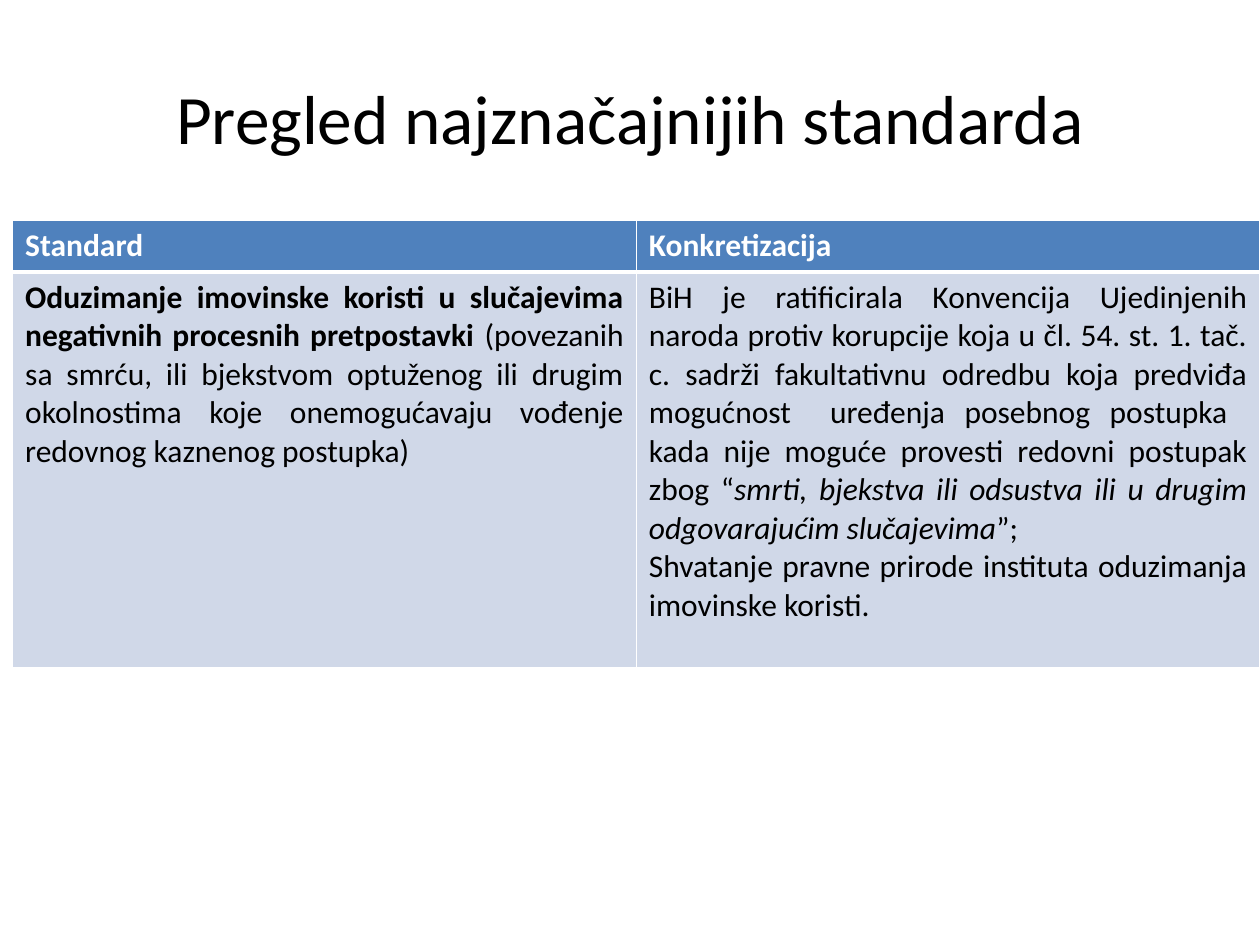
import pptx
import pptx.dml.color
import pptx.enum.text
import pptx.oxml
import pptx.oxml.ns
import pptx.util
from dataclasses import dataclass

Inches = pptx.util.Inches
Pt = pptx.util.Pt
ALIGN = pptx.enum.text.PP_ALIGN
ANCHOR = pptx.enum.text.MSO_ANCHOR


@dataclass(frozen=True)
class Theme:
    font: str = "Calibri"
    text: str = "000000"
    light: str = "FFFFFF"
    header: str = "4F81BD"
    body: str = "D0D8E8"
    title_size: float = 39.6
    cell_size: float = 18


THEME = Theme()

HEADERS = ["Standard", "Konkretizacija"]

# Each cell holds paragraphs; each paragraph holds (text, format) runs
BODY = [
    [[
        ("Oduzimanje imovinske koristi u slučajevima negativnih procesnih "
         "pretpostavki", {"bold": True}),
        (" (povezanih sa smrću, ili bjekstvom optuženog ili drugim "
         "okolnostima koje onemogućavaju vođenje redovnog kaznenog "
         "postupka)", {}),
    ]],
    [
        [
            ("BiH je ratificirala Konvencija Ujedinjenih naroda protiv "
             "korupcije koja u čl. 54. st. 1. tač. c. sadrži fakultativnu "
             "odredbu koja predviđa mogućnost  uređenja posebnog postupka  "
             "kada nije moguće provesti redovni postupak zbog “", {}),
            ("smrti, bjekstva ili odsustva ili u drugim odgovarajućim "
             "slučajevima", {"italic": True}),
            ("”;", {}),
        ],
        [("Shvatanje pravne prirode instituta oduzimanja imovinske "
          "koristi.", {})],
    ],
]


def rgb(color):
    return pptx.dml.color.RGBColor.from_string(color)


def write_text(tf, paragraphs, size, color, align):
    for i, runs in enumerate(paragraphs):
        p = tf.add_paragraph() if i else tf.paragraphs[0]
        p.alignment = align
        for text, extra in runs:
            r = p.add_run()
            r.text = text
            formats = {"name": THEME.font, "size": Pt(size),
                       "bold": False, "italic": False, **extra}
            for name, value in formats.items():
                setattr(r.font, name, value)
            r.font.color.rgb = rgb(color)


def set_borders(cell, widths):
    tc_pr = cell._tc.get_or_add_tcPr()
    # Border lines come before the fill, in the order L, R, T, B
    for i, (side, width) in enumerate(widths.items()):
        line = pptx.oxml.parse_xml(
            f'<a:ln{side} {pptx.oxml.ns.nsdecls("a")} w="{Pt(width)}">'
            f'<a:solidFill><a:srgbClr val="{THEME.light}"/></a:solidFill>'
            f'</a:ln{side}>')
        tc_pr.insert(i, line)


def fill_cell(cell, paragraphs, fill, color, align, bottom, top):
    cell.fill.solid()
    cell.fill.fore_color.rgb = rgb(fill)
    set_borders(cell, {"L": 1, "R": 1, "T": top, "B": bottom})
    write_text(cell.text_frame, paragraphs, THEME.cell_size, color, align)


def add_title(s, text):
    sp = s.shapes.add_textbox(Inches(0.5), Inches(0.3), Inches(9), Inches(1.25))
    tf = sp.text_frame
    for name, value in {"word_wrap": True,
                        "vertical_anchor": ANCHOR.MIDDLE}.items():
        setattr(tf, name, value)
    write_text(tf, [[(text, {})]], THEME.title_size, THEME.text, ALIGN.CENTER)


def add_standards_table(s):
    row_heights = [0.41, 3.14]
    table = s.shapes.add_table(
        len(row_heights), len(HEADERS), Inches(0.1), Inches(1.75),
        Inches(9.9), Inches(sum(row_heights))).table
    for row, height in zip(table.rows, row_heights):
        row.height = Inches(height)
    for col, (header, body) in enumerate(zip(HEADERS, BODY)):
        fill_cell(table.cell(0, col), [[(header, {"bold": True})]],
                  THEME.header, THEME.light, ALIGN.LEFT, bottom=3, top=1)
        fill_cell(table.cell(1, col), body,
                  THEME.body, THEME.text, ALIGN.JUSTIFY, bottom=1, top=3)


def main():
    prs = pptx.Presentation()
    prs.slide_width, prs.slide_height = Inches(10), Inches(7.5)
    s = prs.slides.add_slide(prs.slide_layouts[6])
    # Heading
    add_title(s, "Pregled najznačajnijih standarda")
    # Standards and how they are put into practice
    add_standards_table(s)
    prs.save("out.pptx")


if __name__ == "__main__":
    main()
